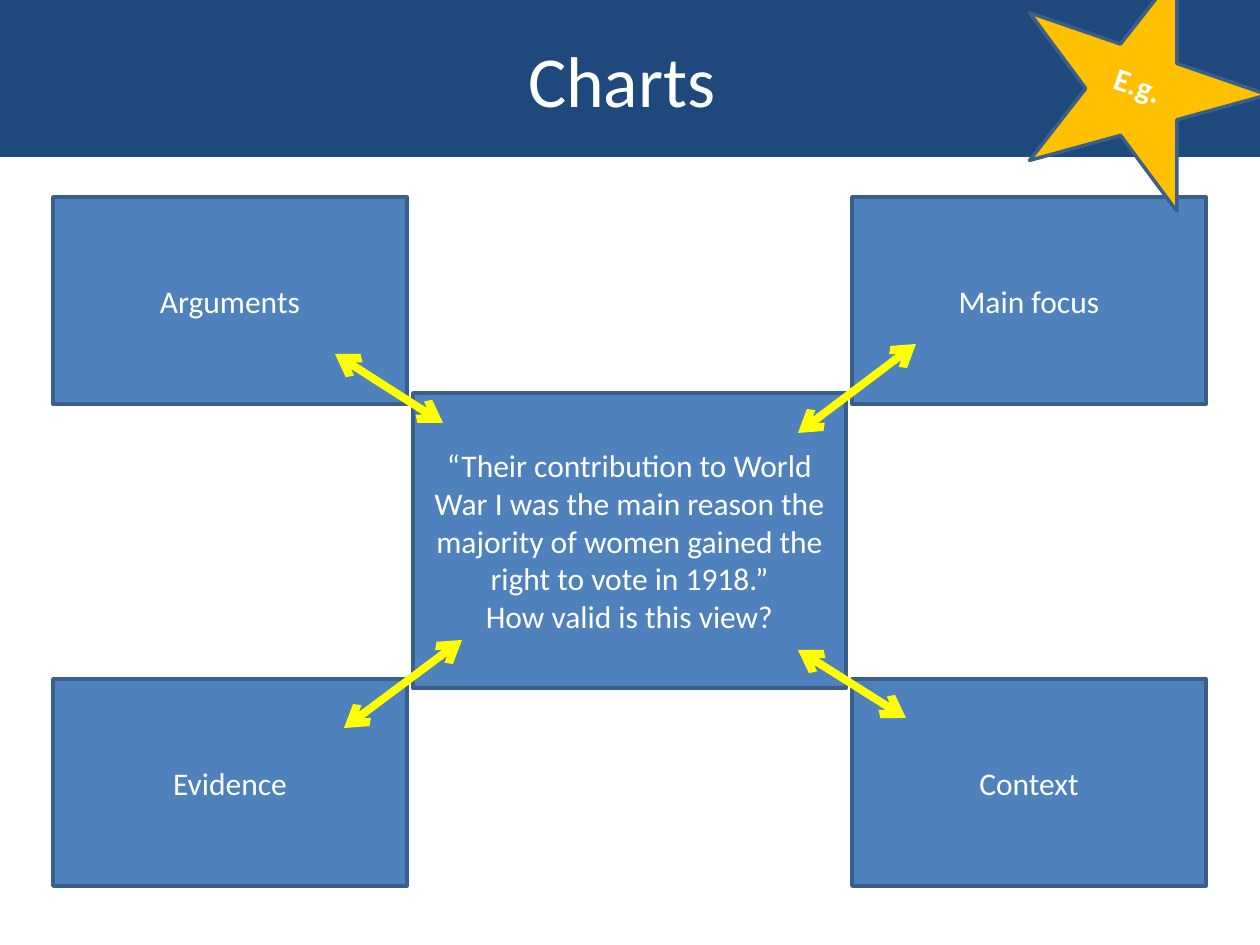
import itertools

import pptx
import pptx.dml.color
import pptx.enum.shapes
import pptx.enum.text
import pptx.oxml
import pptx.oxml.ns
import pptx.util

EMU_PER_PX = 914400 / 126
COLORS = {
    "band": "1F497D",
    "box": "4F81BD",
    "edge": "3A5F8C",
    "star": "FFC000",
    "arrow": "FFFF00",
    "text": "FFFFFF",
}
SHAPES = pptx.enum.shapes.MSO_SHAPE
ALIGN = pptx.enum.text.PP_ALIGN
ANCHOR = pptx.enum.text.MSO_ANCHOR

TOPIC_LEFTS = (53, 852)
TOPIC_TOPS = (197, 679)
TOPIC_SIZE = (354, 207)
TOPICS = ("Arguments", "Main focus", "Evidence", "Context")
QUESTION = (
    "“Their contribution to World War I was the main reason "
    "the majority of women gained the right to vote in 1918.”",
    "How valid is this view?",
)
ARROWS = (
    (798, 433, 916, 344),
    (335, 354, 443, 423),
    (344, 728, 462, 640),
    (798, 650, 906, 718),
)
STAR_TILT = 19


def px(*lengths):
    return [pptx.util.Emu(round(length * EMU_PER_PX)) for length in lengths]


def color(name):
    return pptx.dml.color.RGBColor.from_string(COLORS[name])


def set_all(target, values):
    for name, value in values.items():
        setattr(target, name, value)


def add_panel(shapes, kind, place, fill, edge=None):
    panel = shapes.add_shape(kind, *px(*place))
    panel.shadow.inherit = False
    panel.fill.solid()
    panel.fill.fore_color.rgb = color(fill)
    if edge:
        panel.line.color.rgb = color(edge)
        panel.line.width = pptx.util.Pt(2)
    else:
        panel.line.fill.background()
    return panel


def write(panel, lines, size=18, bold=False, align=ALIGN.CENTER, **frame_format):
    frame = panel.text_frame
    set_all(frame, {"word_wrap": True, "vertical_anchor": ANCHOR.MIDDLE, **frame_format})
    font_format = {"name": "Calibri", "size": pptx.util.Pt(size), "bold": bold}
    for index, line in enumerate(lines):
        para = frame.add_paragraph() if index else frame.paragraphs[0]
        para.alignment = align
        span = para.add_run()
        span.text = line
        set_all(span.font, font_format)
        span.font.color.rgb = color("text")


def add_box(page, place, lines):
    write(add_panel(page.shapes, SHAPES.RECTANGLE, place, "box", "edge"), lines)


def add_star(page):
    group = page.shapes.add_group_shape()
    star = add_panel(group.shapes, SHAPES.STAR_5_POINT, (1014, -34, 252, 226), "star", "edge")
    label = add_panel(group.shapes, SHAPES.RECTANGLE, (1101, 59, 73, 52), "star")
    for part in (star, label):
        part.rotation = STAR_TILT
    write(label, ["E.g."], bold=True, align=ALIGN.RIGHT, word_wrap=False,
          vertical_anchor=ANCHOR.TOP,
          auto_size=pptx.enum.text.MSO_AUTO_SIZE.SHAPE_TO_FIT_TEXT)


def add_double_arrow(page, ends):
    arrow = page.shapes.add_connector(pptx.enum.shapes.MSO_CONNECTOR.STRAIGHT, *px(*ends))
    arrow.line.color.rgb = color("arrow")
    arrow.line.width = pptx.util.Pt(4.5)
    line = arrow.line._get_or_add_ln()
    for tag in ("a:headEnd", "a:tailEnd"):
        tip = pptx.oxml.parse_xml(f"<{tag} {pptx.oxml.ns.nsdecls('a')} type='arrow'/>")
        line.append(tip)
    no_shadow = pptx.oxml.parse_xml(f"<a:effectLst {pptx.oxml.ns.nsdecls('a')}/>")
    arrow._element.spPr.append(no_shadow)


def main():
    deck = pptx.Presentation()
    deck.slide_width, deck.slide_height = px(1260, 945)
    page = deck.slides.add_slide(deck.slide_layouts[6])

    band = add_panel(page.shapes, SHAPES.RECTANGLE, (0, 0, 1260, 157), "band")
    write(band, ["Charts "], size=41)

    add_box(page, (413, 393, 433, 295), QUESTION)
    for topic, (top, left) in zip(TOPICS, itertools.product(TOPIC_TOPS, TOPIC_LEFTS)):
        add_box(page, (left, top, *TOPIC_SIZE), [topic])

    add_star(page)
    for ends in ARROWS:
        add_double_arrow(page, ends)
    deck.save("out.pptx")


if __name__ == "__main__":
    main()
